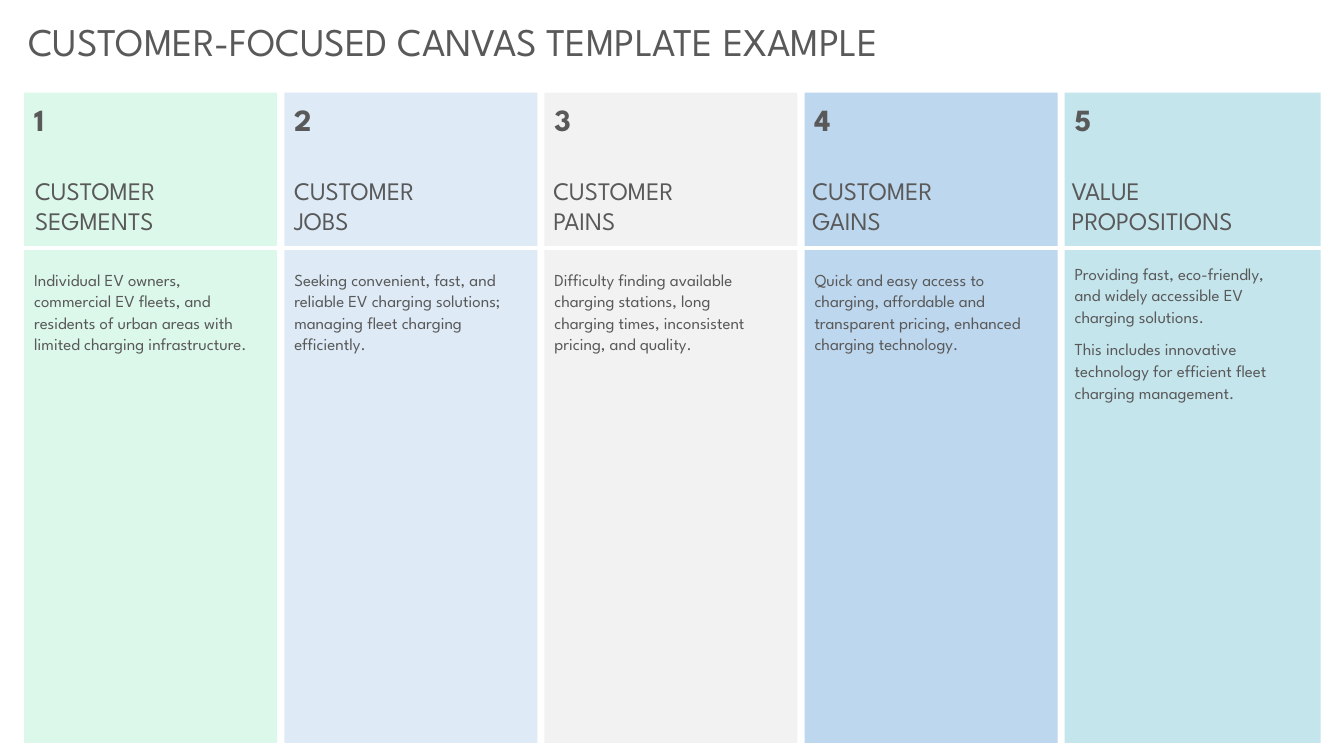
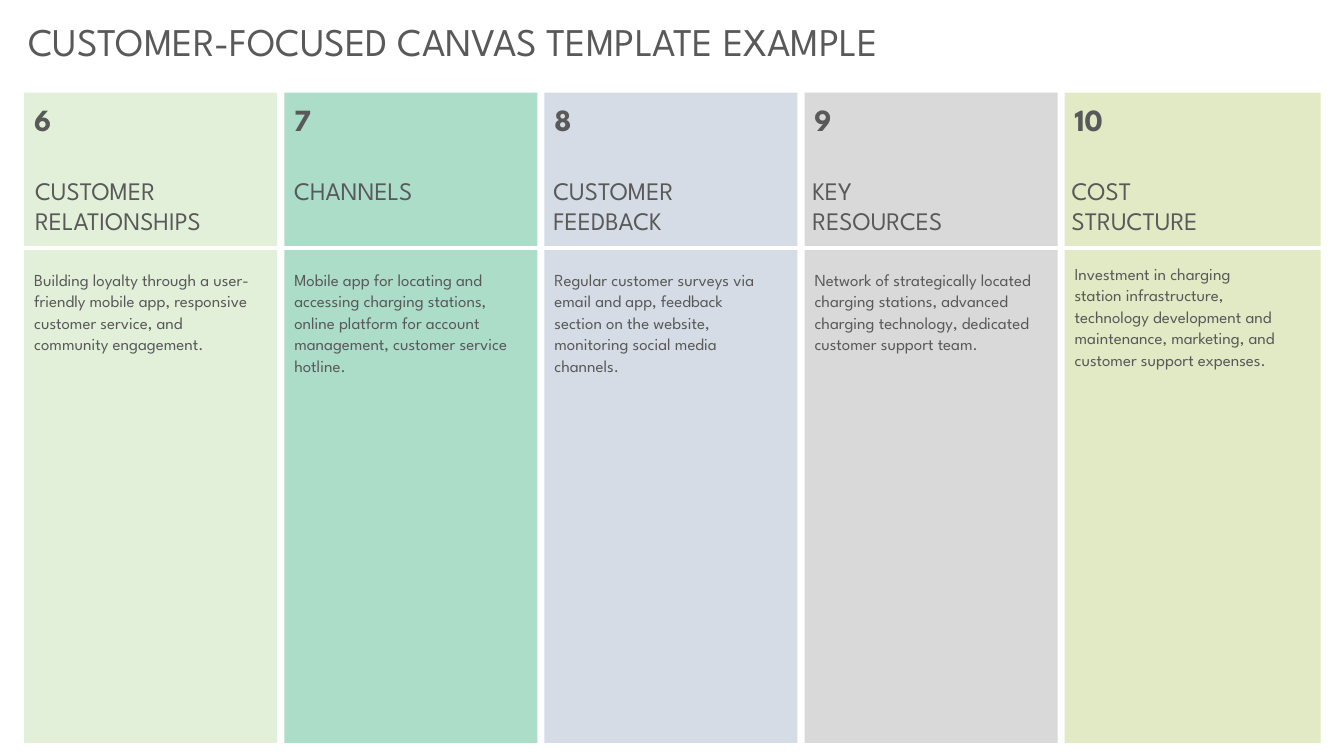
"""Build a two-slide customer-focused canvas with ten numbered columns."""
from lxml.etree import SubElement
from pptx import Presentation
from pptx.dml.color import RGBColor
from pptx.enum.shapes import MSO_CONNECTOR, MSO_SHAPE
from pptx.enum.text import MSO_ANCHOR, MSO_AUTO_SIZE, PP_ALIGN
from pptx.oxml.ns import qn
from pptx.util import Inches, Pt

FONT = "League Spartan"
INK = "595959"
WHITE = "FFFFFF"
TITLE = "CUSTOMER-FOCUSED CANVAS TEMPLATE EXAMPLE"
LEFT, PITCH, HEADING_PITCH = 0.24, 2.58, 2.57
COLUMN_TOP, COLUMN_HEIGHT = 0.92, 6.45

CANVASES = [
    [
        ("DCF8EB", "CUSTOMER\nSEGMENTS",
         ["Individual EV owners, commercial EV fleets, and residents of urban "
          "areas with limited charging infrastructure."]),
        ("DEEBF7", "CUSTOMER\nJOBS",
         ["Seeking convenient, fast, and reliable EV charging solutions; "
          "managing fleet charging efficiently."]),
        ("F2F2F2", "CUSTOMER\nPAINS",
         ["Difficulty finding available charging stations, long charging "
          "times, inconsistent pricing, and quality."]),
        ("BDD7EE", "CUSTOMER\nGAINS",
         ["Quick and easy access to charging, affordable and transparent "
          "pricing, enhanced charging technology."]),
        ("C5E5ED", "VALUE\nPROPOSITIONS",
         ["Providing fast, eco-friendly, and widely accessible EV charging "
          "solutions.",
          "This includes innovative technology for efficient fleet charging "
          "management."]),
    ],
    [
        ("E2F0D9", "CUSTOMER\nRELATIONSHIPS",
         ["Building loyalty through a user-friendly mobile app, responsive "
          "customer service, and community engagement."]),
        ("ABDDC9", "CHANNELS",
         ["Mobile app for locating and accessing charging stations, online "
          "platform for account management, customer service hotline."]),
        ("D6DCE5", "CUSTOMER\nFEEDBACK",
         ["Regular customer surveys via email and app, feedback section on "
          "the website, monitoring social media channels."]),
        ("D9D9D9", "KEY\nRESOURCES",
         ["Network of strategically located charging stations, advanced "
          "charging technology, dedicated customer support team."]),
        ("E1E9C5", "COST\nSTRUCTURE",
         ["Investment in charging station infrastructure, technology "
          "development and maintenance, marketing, and customer support "
          "expenses."]),
    ],
]


def color(value):
    return RGBColor.from_string(value)


def write(frame, paragraphs, size, bold=False, spacing=1.0, after=0):
    frame.word_wrap = True
    frame.auto_size = MSO_AUTO_SIZE.NONE
    frame.vertical_anchor = MSO_ANCHOR.TOP
    for index, text in enumerate(paragraphs):
        paragraph = frame.add_paragraph() if index else frame.paragraphs[0]
        paragraph.alignment = PP_ALIGN.LEFT
        paragraph.line_spacing = spacing
        paragraph.space_after = Pt(after)
        for row, words in enumerate(text.split("\n")):
            if row:
                paragraph.add_line_break()
            run = paragraph.add_run()
            run.text = words
            run.font.name = FONT
            run.font.size = Pt(size)
            run.font.bold = bold
            run.font.color.rgb = color(INK)


deck = Presentation()
deck.slide_width, deck.slide_height = Inches(13.33), Inches(7.5)
layout = deck.slide_layouts.get_by_name("Title Only")
heading_area = layout.placeholders[0]
heading_area.left, heading_area.top = Inches(0.18), Inches(0.12)
heading_area.width, heading_area.height = Inches(12.95), Inches(0.57)

number = 0
for columns in CANVASES:
    slide = deck.slides.add_slide(layout)
    write(slide.shapes.title.text_frame, [TITLE], 28)

    for position, (tint, _, _) in enumerate(columns):
        last = position == len(columns) - 1
        column = slide.shapes.add_shape(
            MSO_SHAPE.RECTANGLE, Inches(LEFT + position * PITCH), Inches(COLUMN_TOP),
            Inches(2.54 if last else 2.51), Inches(COLUMN_HEIGHT))
        column.shadow.inherit = False
        column.fill.solid()
        column.fill.fore_color.rgb = color(tint)
        column.line.fill.background()

    divider = slide.shapes.add_connector(
        MSO_CONNECTOR.STRAIGHT, Inches(LEFT), Inches(2.46), Inches(13.2), Inches(2.46))
    divider.line.color.rgb = color(WHITE)
    divider.line.width = Pt(2.25)
    SubElement(divider.element.spPr, qn("a:effectLst"))

    for position, (_, heading, details) in enumerate(columns):
        number += 1
        last = position == len(columns) - 1
        left = Inches(LEFT + position * PITCH)

        label = slide.shapes.add_textbox(left, Inches(COLUMN_TOP), Inches(0.6), Inches(0.64))
        write(label.text_frame, [str(number)], 22, bold=True, spacing=1.07, after=8)

        name = slide.shapes.add_textbox(
            Inches(0.25 + position * HEADING_PITCH), Inches(1.69), Inches(2.5), Inches(0.71))
        write(name.text_frame, [heading], 18)

        notes = slide.shapes.add_textbox(
            left, Inches(2.55 if last else 2.61), Inches(2.25 if last else 2.38), Inches(1.57))
        write(notes.text_frame, details, 12, spacing=1.07, after=8)

deck.save("out.pptx")
